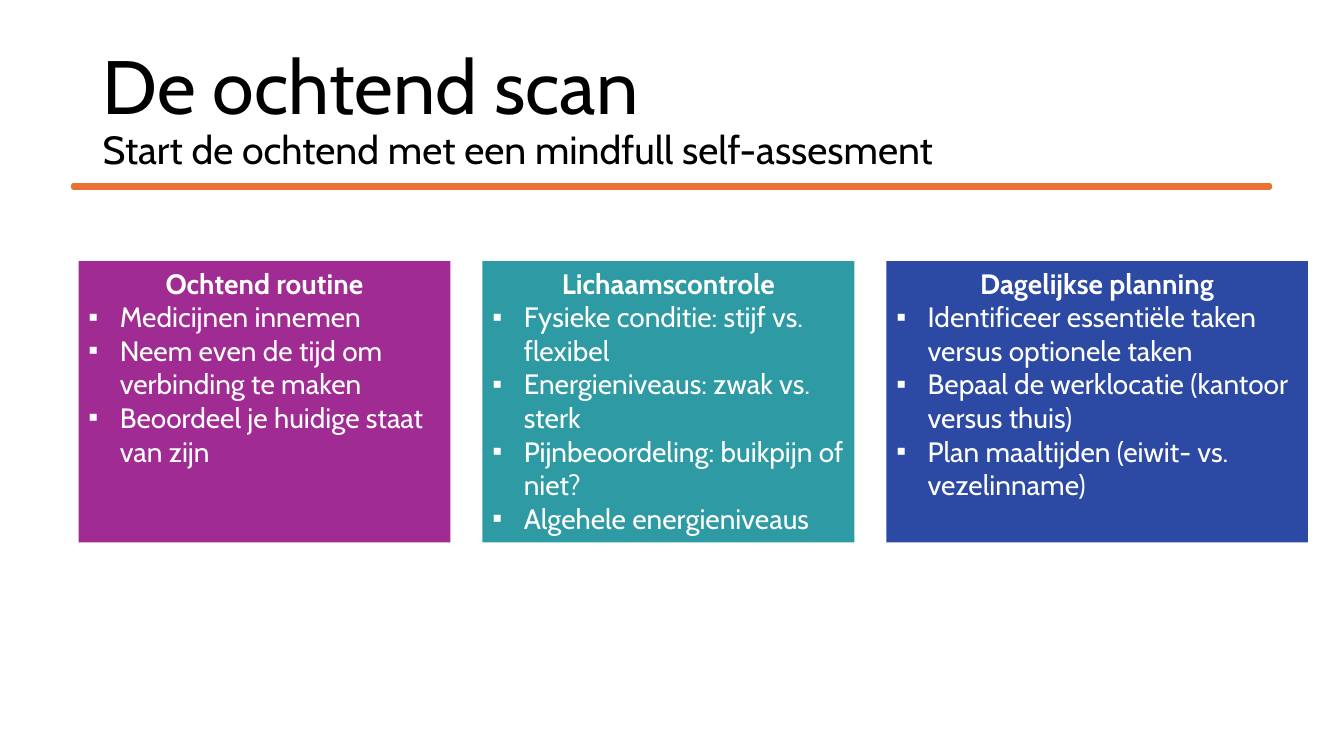
import pptx
import pptx.util
import pptx.dml.color
import pptx.enum.shapes
import pptx.enum.text
import pptx.oxml
import pptx.oxml.ns

Cm = pptx.util.Cm
Pt = pptx.util.Pt
PP_ALIGN = pptx.enum.text.PP_ALIGN
ANCHOR = pptx.enum.text.MSO_ANCHOR
AUTO_SIZE = pptx.enum.text.MSO_AUTO_SIZE


def rgb(value):
    return pptx.dml.color.RGBColor.from_string(value)


def add_xml(parent, tag, attrs=""):
    ns = pptx.oxml.ns.nsdecls("a")
    parent.append(pptx.oxml.parse_xml(f"<a:{tag} {ns} {attrs}/>"))


class Deck:
    font = "Cabin"
    indent = Cm(0.79)

    def __init__(self, s):
        self.s = s

    def style(self, r, size, color, bold=False):
        r.font.name = self.font
        r.font.size = Pt(size)
        r.font.bold = bold
        r.font.color.rgb = rgb(color)

    def title(self, x, y, w, h, heading, subtitle):
        tf = self.s.shapes.add_textbox(Cm(x), Cm(y), Cm(w), Cm(h)).text_frame
        tf.word_wrap = True
        tf.vertical_anchor = ANCHOR.MIDDLE
        p = tf.paragraphs[0]
        p.text = f"{heading}\v{subtitle}"
        p.line_spacing = 0.9
        for r, size in zip(p.runs, (54, 28)):
            self.style(r, size, "000000")

    def rect(self, x, y, w, h, color):
        sp = self.s.shapes.add_shape(
            pptx.enum.shapes.MSO_SHAPE.RECTANGLE, Cm(x), Cm(y), Cm(w), Cm(h))
        sp.shadow.inherit = False
        sp.fill.solid()
        sp.fill.fore_color.rgb = rgb(color)
        sp.line.fill.background()
        return sp

    def rule(self, x, y, w, h, color, weight):
        sp = self.rect(x, y, w, h, color)
        sp.line.color.rgb = rgb(color)
        sp.line.width = Pt(weight)
        add_xml(sp.line._ln, "round")

    def card(self, x, y, w, h, color, heading, items):
        tf = self.rect(x, y, w, h, color).text_frame
        tf.word_wrap = True
        tf.auto_size = AUTO_SIZE.SHAPE_TO_FIT_TEXT
        tf.vertical_anchor = ANCHOR.TOP
        tf.text = "\n".join([heading, *items])
        for i, p in enumerate(tf.paragraphs):
            self.style(p.runs[0], 20, "FFFFFF", bold=i == 0)
            p.alignment = PP_ALIGN.LEFT if i else PP_ALIGN.CENTER
            if i:
                self.bullet(p)

    def bullet(self, p):
        pPr = p._p.get_or_add_pPr()
        pPr.set("marL", str(self.indent))
        pPr.set("indent", str(-self.indent))
        add_xml(pPr, "buFont", 'typeface="Arial"')
        add_xml(pPr, "buChar", 'char="▪"')


CARDS = [
    (9.37, "A02B93", "Ochtend routine", [
        "Medicijnen innemen",
        "Neem even de tijd om verbinding te maken",
        "Beoordeel je huidige staat van zijn",
    ]),
    (9.37, "2D9AA4", "Lichaamscontrole", [
        "Fysieke conditie: stijf vs. flexibel",
        "Energieniveaus: zwak vs. sterk",
        "Pijnbeoordeling: buikpijn of niet?",
        "Algehele energieniveaus",
    ]),
    (10.62, "2C49A3", "Dagelijkse planning", [
        "Identificeer essentiële taken versus optionele taken",
        "Bepaal de werklocatie (kantoor versus thuis)",
        "Plan maaltijden (eiwit- vs. vezelinname)",
    ]),
]
CARD_GAP = 0.81


def main():
    prs = pptx.Presentation()
    prs.slide_width = Cm(33.87)
    prs.slide_height = Cm(19.05)
    deck = Deck(prs.slides.add_slide(prs.slide_layouts[6]))

    deck.title(2.34, 1.02, 29.21, 3.56, "De ochtend scan",
               "Start de ochtend met een mindfull self-assesment")
    deck.rule(1.85, 4.67, 30.15, 0.05, "E97132", 3.25)
    x = 1.98
    for width, color, heading, items in CARDS:
        deck.card(x, 6.58, width, 7.09, color, heading, items)
        x += width + CARD_GAP

    prs.save("out.pptx")


if __name__ == "__main__":
    main()
